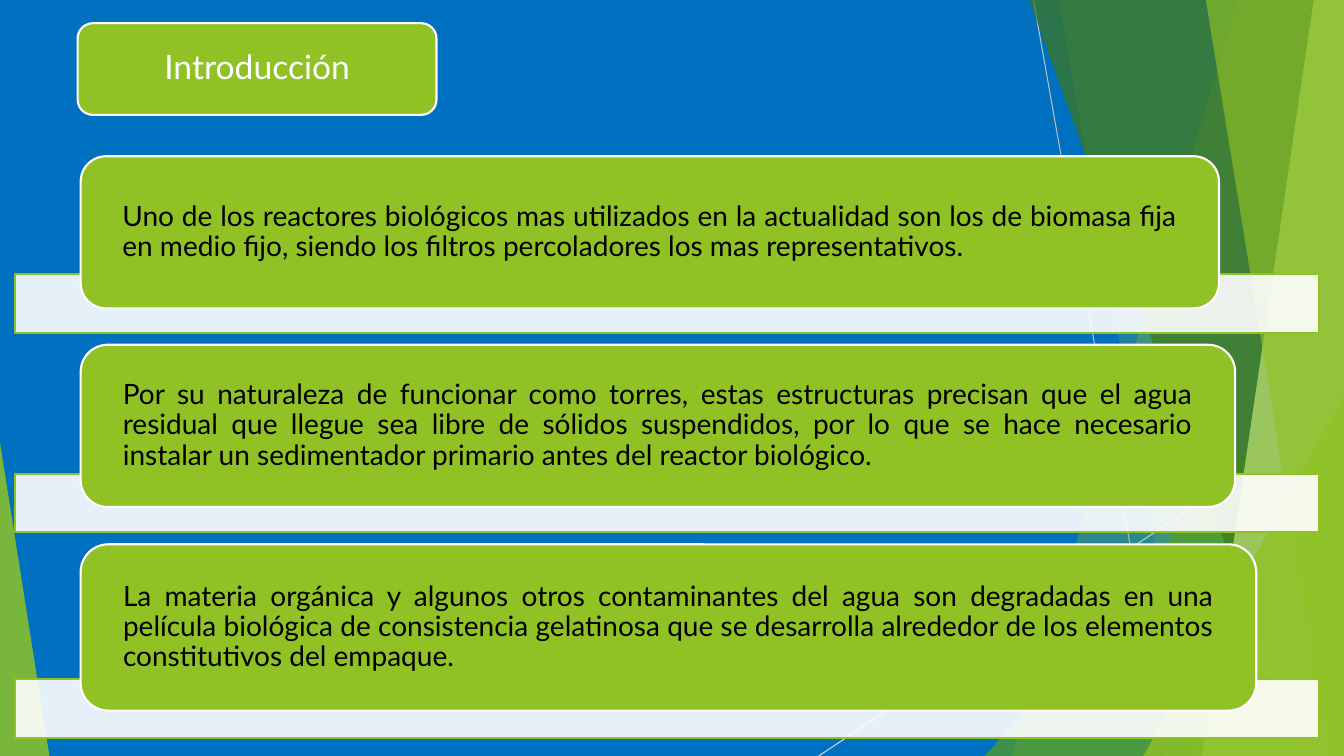
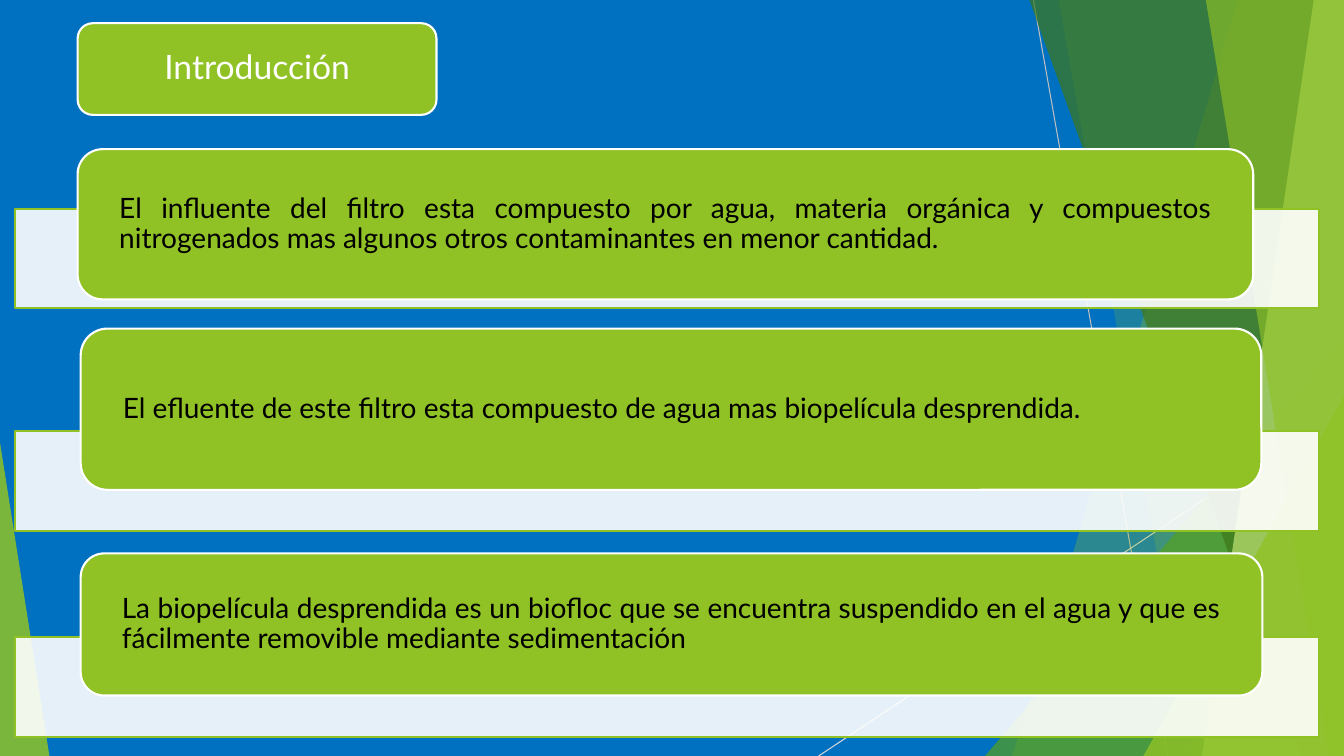
import lxml.etree
import pptx
import pptx.dml.color
import pptx.enum.shapes
import pptx.enum.text
import pptx.oxml.ns
import pptx.util

Inches = pptx.util.Inches
SHAPES = pptx.enum.shapes.MSO_SHAPE
ALIGN = pptx.enum.text.PP_ALIGN

WIDTH, HEIGHT = 13.33, 7.5
FONT = "Lato"
BLUE, GREEN, WHITE, BLACK = "0070C0", "90C226", "FFFFFF", "000000"
TITLE_BOX = (0.77, 0.23, 3.56, 0.91)
BAND_LEFT, BAND_WIDTH = 0.15, 12.93

THIN_LINES = [
    ((10.25, 0), (11.58, HEIGHT), "BFBFBF"),
    ((WIDTH, 4.03), (8.12, HEIGHT), "D9D9D9"),
]
# Each facet reaches the right edge; edge gives its left side as top x, bottom x.
FACETS = [
    {"edge": (12.28, 10.04), "color": GREEN, "alpha": 30},
    {"edge": (10.5, 11.83), "color": GREEN, "alpha": 20},
    {"triangle": (9.77, 3.33, 3.56, 4.17), "apex": 1, "color": "54A021", "alpha": 72},
    {"edge": (10.21, 12.91), "color": "3F7819", "alpha": 70},
    {"edge": (13.03, 11.92), "color": "C0E474", "alpha": 70},
    {"edge": (11.96, 13.18), "color": GREEN, "alpha": 65},
    {"triangle": (11.34, 3.93, 1.99, 3.57), "apex": 1, "color": GREEN, "alpha": 80},
    {"triangle": (0, 4.39, 0.49, 3.11), "apex": 0, "color": GREEN, "alpha": 85},
]

SLIDES = [
    {
        "title": "Introducción",
        "band_height": 0.58,
        "cards": [
            (2.72, (0.8, 1.55, 11.29, 1.51),
             "Uno de los reactores biológicos mas utilizados en la actualidad son los de "
             "biomasa fija en medio fijo, siendo los filtros percoladores los mas "
             "representativos."),
            (4.7, (0.8, 3.42, 11.45, 1.61),
             "Por su naturaleza de funcionar como torres, estas estructuras precisan que el "
             "agua residual que llegue sea libre de sólidos suspendidos, por lo que se hace "
             "necesario instalar un sedimentador primario antes del reactor biológico."),
            (6.74, (0.8, 5.4, 11.66, 1.65),
             "La materia orgánica y algunos otros contaminantes del agua son degradadas en "
             "una película biológica de consistencia gelatinosa que se desarrolla alrededor "
             "de los elementos constitutivos del empaque."),
        ],
    },
    {
        "title": "Introducción",
        "band_height": 0.99,
        "cards": [
            (2.07, (0.77, 1.48, 11.66, 1.49),
             "El influente del filtro esta compuesto por agua, materia orgánica y compuestos "
             "nitrogenados mas algunos otros contaminantes en menor cantidad."),
            (4.28, (0.8, 3.26, 11.71, 1.6),
             "El efluente de este filtro esta compuesto de agua mas biopelícula desprendida."),
            (6.32, (0.8, 5.49, 11.72, 1.41),
             "La biopelícula desprendida es un biofloc que se encuentra suspendido en el agua "
             "y que es fácilmente removible mediante sedimentación"),
        ],
    },
]


def rgb(color):
    return pptx.dml.color.RGBColor.from_string(color)


def paint(shape, color, alpha=100, line=None):
    shape.shadow.inherit = False
    shape.fill.solid()
    shape.fill.fore_color.rgb = rgb(color)
    if alpha < 100:
        fill = shape.element.spPr.find(pptx.oxml.ns.qn("a:solidFill"))
        lxml.etree.SubElement(fill[0], pptx.oxml.ns.qn("a:alpha"), val=str(alpha * 1000))
    if line:
        shape.line.color.rgb = rgb(line)
        shape.line.width = pptx.util.Pt(1.5)
    else:
        shape.line.fill.background()


def add_block(slide, kind, box, color, **look):
    shape = slide.shapes.add_shape(kind, *map(Inches, box))
    paint(shape, color, **look)
    return shape


def write_text(shape, text, size, color, align, margins):
    frame = shape.text_frame
    frame.word_wrap = True
    frame.auto_size = pptx.enum.text.MSO_AUTO_SIZE.NONE
    frame.vertical_anchor = pptx.enum.text.MSO_ANCHOR.MIDDLE
    frame.margin_left = frame.margin_right = Inches(margins[0])
    frame.margin_top = frame.margin_bottom = Inches(margins[1])
    paragraph = frame.paragraphs[0]
    paragraph.alignment = align
    paragraph.line_spacing = 0.9
    run = paragraph.add_run()
    run.text = text
    run.font.name = FONT
    run.font.size = pptx.util.Pt(size)
    run.font.color.rgb = rgb(color)


def add_thin_line(slide, start, end, color):
    connector = slide.shapes.add_connector(
        pptx.enum.shapes.MSO_CONNECTOR.STRAIGHT, *map(Inches, start + end))
    connector.line.color.rgb = rgb(color)
    connector.line.width = pptx.util.Pt(0.75)
    lxml.etree.SubElement(connector.element.spPr, pptx.oxml.ns.qn("a:effectLst"))


def add_facet(slide, facet):
    if "triangle" in facet:
        shape = add_block(slide, SHAPES.ISOSCELES_TRIANGLE, facet["triangle"],
                          facet["color"], alpha=facet["alpha"])
        shape.adjustments[0] = facet["apex"]
        return
    top, bottom = facet["edge"]
    builder = slide.shapes.build_freeform(Inches(top), 0)
    corners = [(WIDTH, 0), (WIDTH, HEIGHT), (bottom, HEIGHT)]
    builder.add_line_segments([(Inches(x), Inches(y)) for x, y in corners], close=True)
    paint(builder.convert_to_shape(), facet["color"], facet["alpha"])


def place(shape, box):
    shape.left, shape.top, shape.width, shape.height = map(Inches, box)


def decorate_layout(layout, slide):
    layout.background.fill.solid()
    layout.background.fill.fore_color.rgb = rgb(BLUE)
    place(layout.placeholders[0], TITLE_BOX)
    for start, end, color in THIN_LINES:
        add_thin_line(slide, start, end, color)
    for facet in FACETS:
        add_facet(slide, facet)
    add_block(slide, SHAPES.ROUNDED_RECTANGLE, TITLE_BOX, GREEN, line=WHITE)
    decorations = [shape for shape in slide.shapes if not shape.is_placeholder]
    first_placeholder = layout.placeholders[0].element
    for number, shape in enumerate(decorations, 100):
        shape.element.xpath(".//p:cNvPr")[0].set("id", str(number))
        first_placeholder.addprevious(shape.element)


def fill_slide(slide, content):
    place(slide.shapes.title, TITLE_BOX)
    write_text(slide.shapes.title, content["title"], 24, WHITE, ALIGN.CENTER, (0.1, 0.1))
    for band_top, box, text in content["cards"]:
        band = (BAND_LEFT, band_top, BAND_WIDTH, content["band_height"])
        add_block(slide, SHAPES.RECTANGLE, band, WHITE, alpha=90, line=GREEN)
        card = add_block(slide, SHAPES.ROUNDED_RECTANGLE, box, GREEN, line=WHITE)
        write_text(card, text, 20, BLACK, ALIGN.JUSTIFY, (0.34, 0))


def main():
    presentation = pptx.Presentation()
    presentation.slide_width = Inches(WIDTH)
    presentation.slide_height = Inches(HEIGHT)
    layout = presentation.slide_layouts.get_by_name("Title Only")
    slides = [presentation.slides.add_slide(layout) for content in SLIDES]
    decorate_layout(layout, slides[0])
    for slide, content in zip(slides, SLIDES):
        fill_slide(slide, content)
    presentation.save("out.pptx")


if __name__ == "__main__":
    main()
